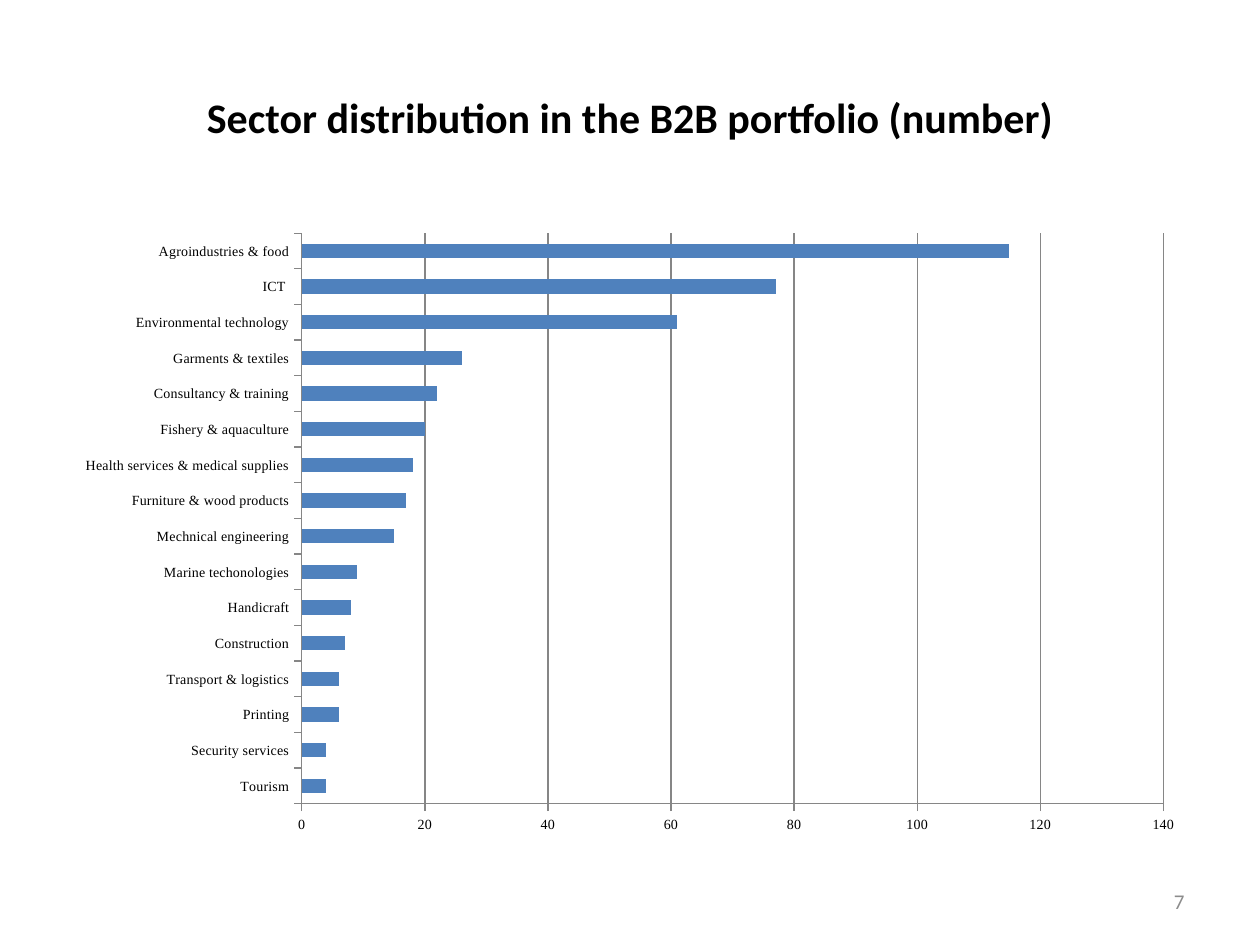
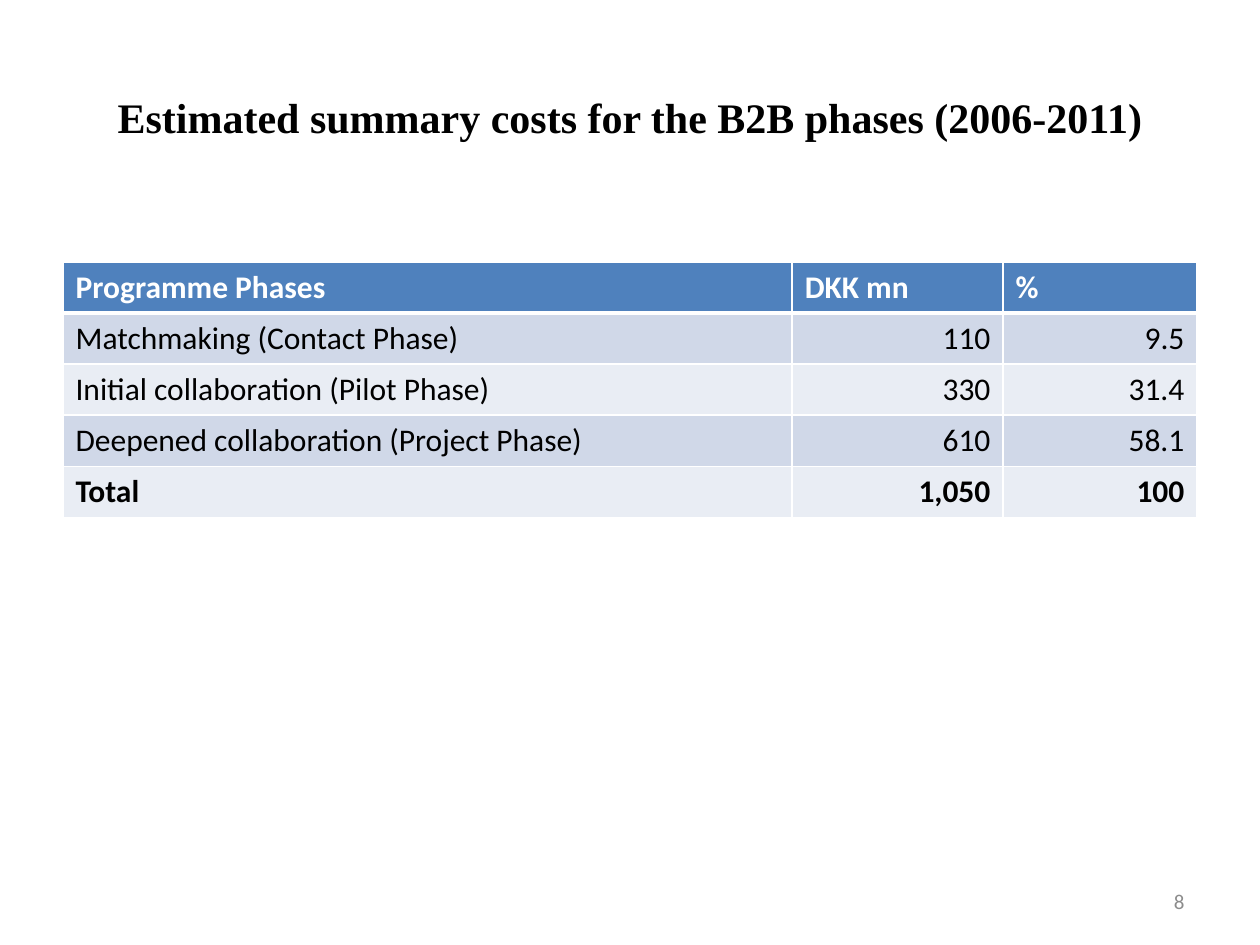
from lxml.etree import SubElement
from pptx import Presentation
from pptx.chart.data import CategoryChartData
from pptx.dml.color import RGBColor
from pptx.enum.chart import XL_CHART_TYPE as ChartType, XL_TICK_MARK as TickMark
from pptx.enum.text import MSO_ANCHOR as Anchor, PP_ALIGN as Align
from pptx.oxml.ns import qn
from pptx.util import Cm, Pt

COLORS = {
    "ink": "000000",
    "paper": "FFFFFF",
    "accent": "4F81BD",
    "band_dark": "D0D8E8",
    "band_light": "E9EDF4",
    "axis": "868686",
    "page_number": "8C8C8C",
}
SANS, SERIF = "Calibri", "Times New Roman"
MARGIN, CONTENT_WIDTH = Cm(1.27), Cm(22.86)


def rgb(name):
    return RGBColor.from_string(COLORS[name])


def write(frame, text, font, size, color, align, bold=False):
    """Put one formatted run into the first paragraph of a text frame."""
    paragraph = frame.paragraphs[0]
    paragraph.alignment = align
    run = paragraph.add_run()
    run.text = text
    run.font.name = font
    run.font.size = Pt(size)
    run.font.bold = bold
    run.font.color.rgb = rgb(color)


prs = Presentation()
prs.slide_width, prs.slide_height = Cm(25.4), Cm(19.05)

# Title and page number on both slides
pages = [
    ("Sector distribution in the B2B portfolio (number)", SANS, "7"),
    ("Estimated summary costs for the B2B phases (2006-2011)", SERIF, "8"),
]
slides = []
for heading, heading_font, number in pages:
    slide = prs.slides.add_slide(prs.slide_layouts[6])
    slides.append(slide)
    title = slide.shapes.add_textbox(MARGIN, Cm(0.76), CONTENT_WIDTH, Cm(3.18)).text_frame
    page_number = slide.shapes.add_textbox(Cm(18.2), Cm(17.66), Cm(5.93), Cm(1.01)).text_frame
    for frame in (title, page_number):
        frame.word_wrap = True
        frame.vertical_anchor = Anchor.MIDDLE
    write(title, heading, heading_font, 24, "ink", Align.CENTER, bold=True)
    write(page_number, number, SANS, 12, "page_number", Align.RIGHT)
sector_slide, cost_slide = slides

# Sector chart, listed from the bottom bar up
sectors = {
    "Tourism": 4,
    "Security services": 4,
    "Printing": 6,
    "Transport & logistics": 6,
    "Construction": 7,
    "Handicraft": 8,
    "Marine techonologies": 9,
    "Mechnical engineering": 15,
    "Furniture & wood products": 17,
    "Health services & medical supplies": 18,
    "Fishery & aquaculture": 20,
    "Consultancy & training": 22,
    "Garments & textiles": 26,
    "Environmental technology": 61,
    "ICT ": 77,
    "Agroindustries & food": 115,
}
sector_data = CategoryChartData()
sector_data.categories = list(sectors)
sector_data.add_series("Series 1", list(sectors.values()))
chart = sector_slide.shapes.add_chart(
    ChartType.BAR_CLUSTERED, MARGIN, Cm(4.45), CONTENT_WIDTH, Cm(12.57), sector_data
).chart
chart.has_title = False
chart.has_legend = False
chart.font.name = SANS
chart.font.size = Pt(10)
chart.font.color.rgb = rgb("ink")

bars = chart.plots[0]
bars.gap_width = 150
bars.vary_by_categories = False
bar_fill = bars.series[0].format.fill
bar_fill.solid()
bar_fill.fore_color.rgb = rgb("accent")

count_axis = chart.value_axis
count_axis.minimum_scale, count_axis.maximum_scale = 0, 140
count_axis.major_unit = 20
count_axis.has_major_gridlines = True
for axis in (chart.category_axis, count_axis):
    axis.major_tick_mark = TickMark.OUTSIDE
    axis.minor_tick_mark = TickMark.NONE
    axis.tick_labels.font.name = SERIF
    axis.tick_labels.font.size = Pt(8)
    axis.tick_labels.font.color.rgb = rgb("ink")
for part in (chart.category_axis, count_axis, count_axis.major_gridlines):
    part.format.line.color.rgb = rgb("axis")
    part.format.line.width = Pt(0.75)

# Cost table
costs = [
    ("Programme Phases", "DKK mn", "%"),
    ("Matchmaking (Contact Phase)", "110", "9.5"),
    ("Initial collaboration (Pilot Phase)", "330", "31.4"),
    ("Deepened collaboration (Project Phase)", "610", "58.1"),
    ("Total", "1,050", "100"),
]
column_widths = [Cm(14.7), Cm(4.25), Cm(3.91)]
row_height = Cm(1.03)
table = cost_slide.shapes.add_table(
    len(costs), len(column_widths), MARGIN, Cm(5.28), CONTENT_WIDTH, row_height * len(costs)
).table
for column, width in zip(table.columns, column_widths):
    column.width = width

for r, phase in enumerate(costs):
    table.rows[r].height = row_height
    is_header = r == 0
    is_total = r == len(costs) - 1
    fill_name = "accent" if is_header else ("band_light", "band_dark")[r % 2]
    for c, text in enumerate(phase):
        cell = table.cell(r, c)
        write(
            cell.text_frame, text, SANS, 18,
            "paper" if is_header else "ink",
            Align.RIGHT if c and not is_header else Align.LEFT,
            bold=is_header or is_total,
        )
        # Borders come before the fill in the cell properties
        properties = cell._tc.get_or_add_tcPr()
        for side in ("L", "R", "T", "B"):
            below_header = (r, side) in ((0, "B"), (1, "T"))
            border = SubElement(properties, qn(f"a:ln{side}"), w=str(Pt(3 if below_header else 1)))
            SubElement(SubElement(border, qn("a:solidFill")), qn("a:srgbClr"), val=COLORS["paper"])
        cell.fill.solid()
        cell.fill.fore_color.rgb = rgb(fill_name)

prs.save("out.pptx")
